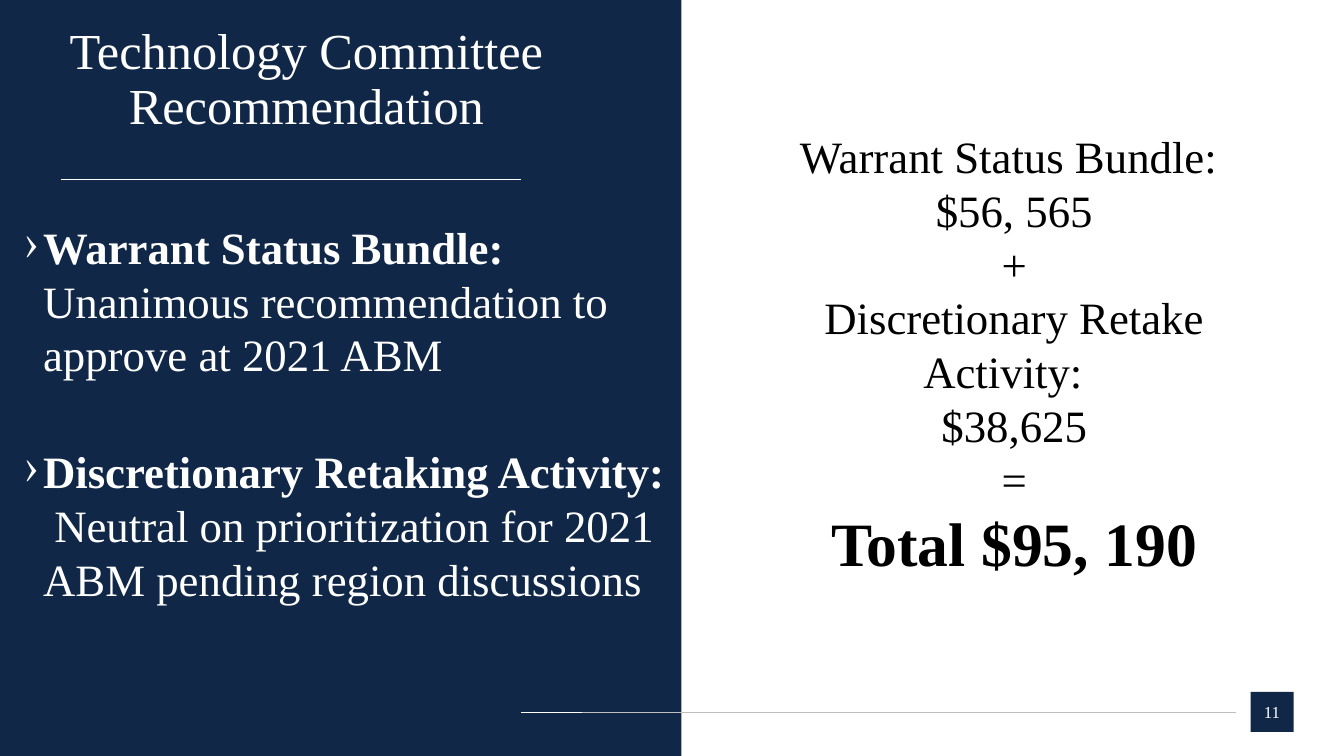
from dataclasses import dataclass, field
from lxml import etree
from pptx import Presentation
from pptx.dml.color import RGBColor
from pptx.enum.shapes import MSO_CONNECTOR as Conn, MSO_SHAPE as Shape
from pptx.enum.text import MSO_ANCHOR as Anchor, PP_ALIGN as Align
from pptx.oxml.ns import qn
from pptx.util import Pt

PX = 9525
NAVY, WHITE, BLACK, GREY = "102747", "FFFFFF", "000000", "BFBFBF"
FONT = "Times New Roman"
Box = tuple[int, int, int, int]


@dataclass
class Run:
    text: str
    size: int = 32
    bold: bool = False


@dataclass
class Para:
    runs: list[Run]
    form: dict = field(default_factory=lambda: {"alignment": Align.CENTER})
    bullet: str = ""


@dataclass
class Block:
    box: Box
    paras: list[Para]
    tint: str = WHITE
    form: dict = field(default_factory=dict)


@dataclass
class Rule:
    left: int
    right: int
    y: int
    tint: str


def color(code: str) -> RGBColor:
    return RGBColor.from_string(code)


def emu(box: Box) -> list[int]:
    return [n * PX for n in box]


def apply(target, form: dict) -> None:
    """Set each format value on the target."""
    for key, value in form.items():
        setattr(target, key, value)


def mark(para, sign: str) -> None:
    """Give the paragraph a white bullet with a hanging indent."""
    props = para._p.get_or_add_pPr()
    props.set("marL", str(18 * PX))
    props.set("indent", str(-18 * PX))
    tint = etree.SubElement(props, qn("a:buClr"))
    etree.SubElement(tint, qn("a:srgbClr"), val=WHITE)
    etree.SubElement(props, qn("a:buChar"), char=sign)


def write(frame, block: Block) -> None:
    apply(frame, {"word_wrap": True} | block.form)
    for i, item in enumerate(block.paras):
        para = frame.add_paragraph() if i else frame.paragraphs[0]
        apply(para, item.form)
        if item.bullet:
            mark(para, item.bullet)
        for part in item.runs:
            run = para.add_run()
            run.text = part.text
            apply(run.font, {"name": FONT, "size": Pt(part.size), "bold": part.bold})
            run.font.color.rgb = color(block.tint)


def add_text(slide, block: Block) -> None:
    write(slide.shapes.add_textbox(*emu(block.box)).text_frame, block)


def add_rect(slide, box: Box):
    rect = slide.shapes.add_shape(Shape.RECTANGLE, *emu(box))
    rect.shadow.inherit = False
    rect.fill.solid()
    rect.fill.fore_color.rgb = color(NAVY)
    rect.line.fill.background()
    return rect


def add_rule(slide, rule: Rule) -> None:
    ends = emu((rule.left, rule.y, rule.right, rule.y))
    line = slide.shapes.add_connector(Conn.STRAIGHT, *ends)
    line.line.color.rgb = color(rule.tint)
    line.line.width = Pt(0.5)
    etree.SubElement(line._element.spPr, qn("a:effectLst"))


FLUSH = dict.fromkeys(
    ("margin_left", "margin_top", "margin_right", "margin_bottom"), 0)
MID = FLUSH | {"vertical_anchor": Anchor.MIDDLE}

TITLE = Block(
    (50, 24, 484, 106),
    [Para([Run("Technology Committee Recommendation", 36)],
          {"alignment": Align.CENTER, "line_spacing": 0.9})],
    form=MID)

ADVICE = [
    ("Warrant Status Bundle:  ",
     "Unanimous recommendation to approve at 2021 ABM"),
    ("Discretionary Retaking Activity:  ",
     "Neutral on prioritization for 2021 ABM pending region discussions"),
]
BODY = Block(
    (23, 209, 617, 420),
    [Para([Run(head, bold=True), Run(text)], {"space_after": Pt(45)}, "›")
     for head, text in ADVICE],
    form=FLUSH)

SUM = ["Warrant Status Bundle:  $56, 565", "+",
       "Discretionary Retake Activity:  ", "$38,625", "="]
COST = Block(
    (741, 118, 450, 443),
    [Para([Run(text)]) for text in SUM]
    + [Para([Run("Total $95, 190", 44, True)])],
    BLACK)

PAGE = Block((1191, 659, 41, 38), [Para([Run("11", 12)])], form=MID)

RULES = [Rule(554, 1177, 678, GREY), Rule(58, 496, 171, WHITE),
         Rule(496, 554, 678, WHITE)]


def main() -> None:
    deck = Presentation()
    apply(deck, {"slide_width": 1280 * PX, "slide_height": 720 * PX})
    slide = deck.slides.add_slide(deck.slide_layouts[6])
    add_rect(slide, (0, 0, 649, 720))
    add_text(slide, TITLE)
    add_text(slide, BODY)
    write(add_rect(slide, PAGE.box).text_frame, PAGE)
    for rule in RULES:
        add_rule(slide, rule)
    add_text(slide, COST)
    deck.save("out.pptx")


if __name__ == "__main__":
    main()
